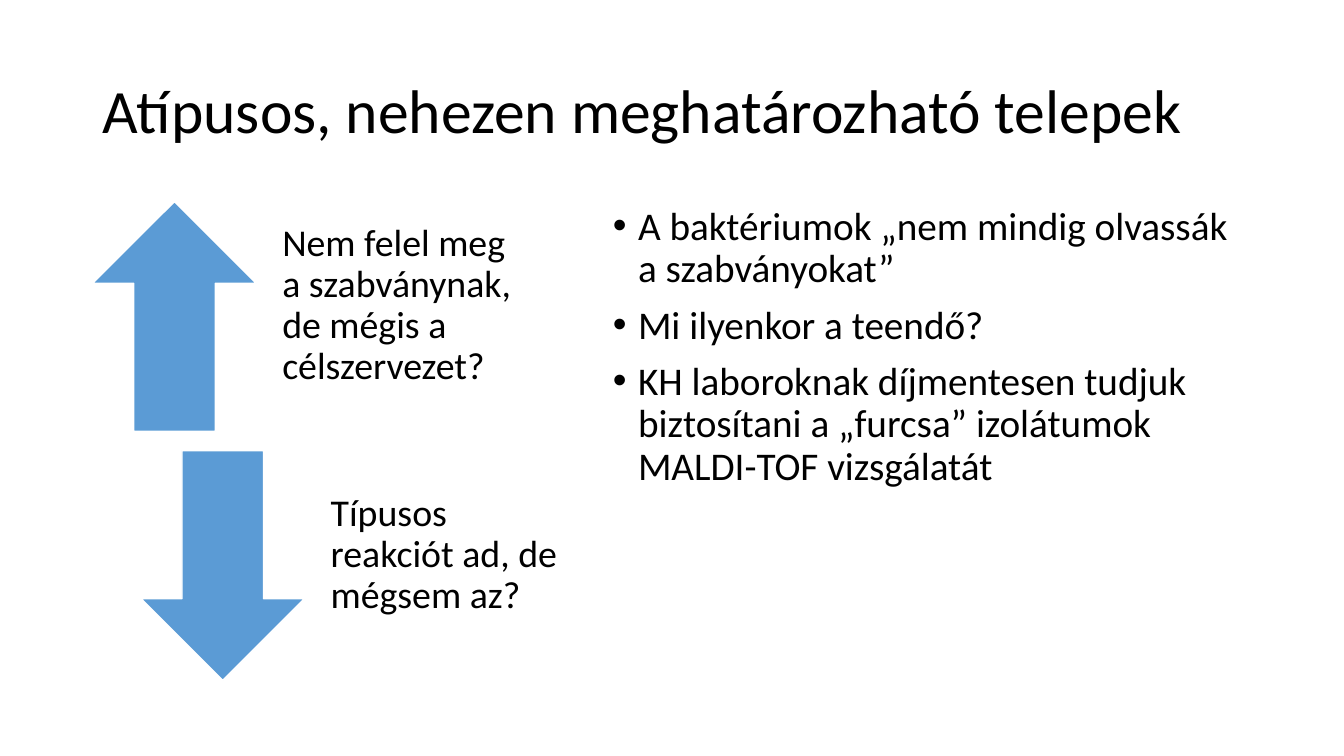
from lxml.etree import SubElement
from pptx import Presentation
from pptx.dml.color import RGBColor
from pptx.enum.shapes import MSO_SHAPE
from pptx.enum.text import MSO_ANCHOR, MSO_AUTO_SIZE, PP_ALIGN
from pptx.oxml.ns import qn
from pptx.util import Inches, Pt

BLACK = RGBColor(0x00, 0x00, 0x00)
WHITE = RGBColor(0xFF, 0xFF, 0xFF)
BLUE = RGBColor(0x5B, 0x9B, 0xD5)


def style(para, size):
    para.alignment = PP_ALIGN.LEFT
    para.line_spacing = 0.9
    para.font.name = "Calibri"
    para.font.size = Pt(size)
    para.font.color.rgb = BLACK


deck = Presentation()
deck.slide_width = Inches(13.33)
deck.slide_height = Inches(7.5)
slide = deck.slides.add_slide(deck.slide_layouts[5])

# Title
title = slide.shapes.title
title.left, title.top = Inches(0.92), Inches(0.4)
title.width, title.height = Inches(11.5), Inches(1.45)
frame = title.text_frame
frame.text = "Atípusos, nehezen meghatározható telepek"
frame.word_wrap = True
frame.auto_size = MSO_AUTO_SIZE.NONE
frame.vertical_anchor = MSO_ANCHOR.MIDDLE
style(frame.paragraphs[0], 44)

# Opposing arrows, each with its question on the right
cases = [
    (MSO_SHAPE.UP_ARROW, 0.92, 2,
     "Nem felel meg a szabványnak, de mégis a célszervezet?"),
    (MSO_SHAPE.DOWN_ARROW, 1.4, 4.47,
     "Típusos reakciót ad, de mégsem az?"),
]
for kind, left, top, text in cases:
    arrow = slide.shapes.add_shape(
        kind, Inches(left), Inches(top), Inches(1.62), Inches(2.28))
    arrow.shadow.inherit = False
    arrow.fill.solid()
    arrow.fill.fore_color.rgb = BLUE
    arrow.line.color.rgb = WHITE
    arrow.line.width = Pt(1)

    box = slide.shapes.add_textbox(
        Inches(left + 1.67), Inches(top), Inches(2.74), Inches(2.28))
    frame = box.text_frame
    frame.word_wrap = True
    frame.vertical_anchor = MSO_ANCHOR.MIDDLE
    frame.margin_left = frame.margin_right = Inches(0.21)
    frame.margin_top, frame.margin_bottom = 0, Inches(0.21)
    frame.text = text
    style(frame.paragraphs[0], 27)

# Bullet list
points = [
    "A baktériumok „nem mindig olvassák a szabványokat”",
    "Mi ilyenkor a teendő?",
    "KH laboroknak díjmentesen tudjuk biztosítani a „furcsa” izolátumok "
    "MALDI-TOF vizsgálatát",
]
box = slide.shapes.add_textbox(
    Inches(5.98), Inches(2), Inches(6.44), Inches(4.76))
frame = box.text_frame
frame.word_wrap = True
for i, text in enumerate(points):
    para = frame.add_paragraph() if i else frame.paragraphs[0]
    para.text = text
    para.space_before = Pt(10 if i else 0)
    props = para._p.get_or_add_pPr()
    props.set("marL", str(Inches(0.25)))
    props.set("indent", str(Inches(-0.25)))
    SubElement(props, qn("a:buFont"), typeface="Arial")
    SubElement(props, qn("a:buChar"), char="•")
    style(para, 28)

deck.save("out.pptx")
